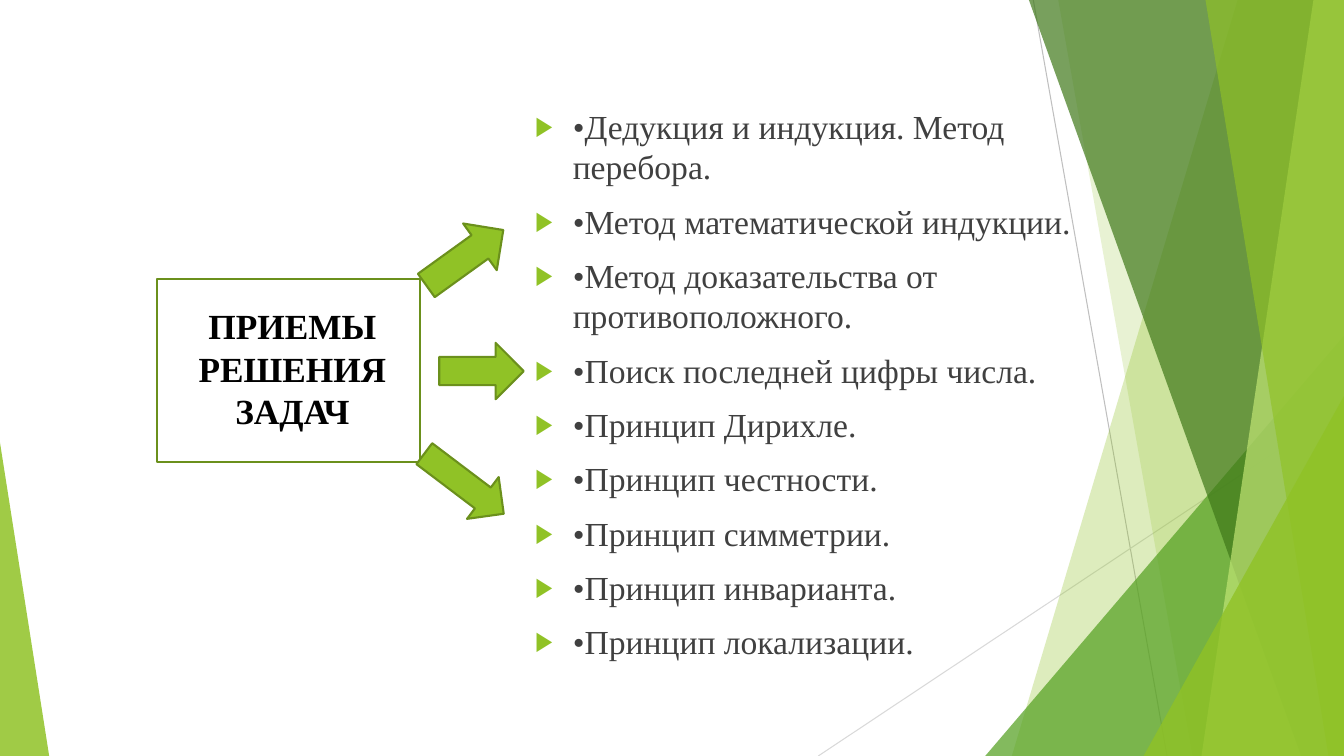
from collections import namedtuple
from dataclasses import dataclass
from lxml import etree
from pptx import Presentation
from pptx import util as u
from pptx.dml import color
from pptx.enum import shapes, text
from pptx.oxml import ns

Box = namedtuple("Box", "x y w h")


@dataclass(frozen=True)
class Theme:
    font: str = "Times New Roman"
    head: float = 25.2
    body: float = 24
    gap: float = 10
    lime: str = "90C226"
    edge: str = "6B901C"
    leaf: str = "54A021"
    moss: str = "3F7819"
    pale: str = "C0E474"
    ink: str = "404040"
    dark: str = "000000"
    rule: str = "BFBFBF"
    mist: str = "D9D9D9"


theme = Theme()
METHODS = [
    "Дедукция и индукция. Метод перебора.",
    "Метод математической индукции.",
    "Метод доказательства от противоположного.",
    "Поиск последней цифры числа.",
    "Принцип Дирихле.",
    "Принцип честности.",
    "Принцип симметрии.",
    "Принцип инварианта.",
    "Принцип локализации.",
]


def rgb(code):
    return color.RGBColor.from_string(code)


def add(node, tag, **attrs):
    return etree.SubElement(node, ns.qn(tag), **attrs)


def place(item, box):
    item.left, item.top, item.width, item.height = map(u.Cm, box)


def paint(shape, code, alpha):
    shape.shadow.inherit = False
    shape.fill.solid()
    shape.fill.fore_color.rgb = rgb(code)
    shape.line.fill.background()
    tint = shape.element.spPr.find(".//" + ns.qn("a:srgbClr"))
    add(tint, "a:alpha", val=str(alpha * 1000))


def style(para, size, code, bold=False):
    for run in para.runs:
        run.font.name = theme.font
        run.font.size = u.Pt(size)
        run.font.bold = bold
        run.font.color.rgb = rgb(code)


def draw_line(slide, start, end, code):
    line = slide.shapes.add_connector(
        shapes.MSO_CONNECTOR.STRAIGHT, *map(u.Cm, start + end))
    line.line.color.rgb = rgb(code)
    line.line.width = u.Pt(0.75)
    add(line.element.spPr, "a:effectLst")


def draw_band(slide, box, top, base, code, alpha):
    right, low = box.x + box.w, box.y + box.h
    points = [(right, box.y), (right, low), (box.x + base, low)]
    band = slide.shapes.build_freeform(u.Cm(box.x + top), u.Cm(box.y))
    band.add_line_segments([(u.Cm(x), u.Cm(y)) for x, y in points])
    paint(band.convert_to_shape(), code, alpha)


def draw_wedge(slide, box, width, height, side, code, alpha):
    left = box.x + side * (box.w - width)
    wedge = slide.shapes.add_shape(
        shapes.MSO_SHAPE.ISOSCELES_TRIANGLE,
        *map(u.Cm, (left, box.y + box.h - height, width, height)))
    wedge.adjustments[0] = side
    paint(wedge, code, alpha)


def draw_decor(slide, box):
    right, low = box.x + box.w, box.y + box.h
    draw_line(slide, (box.x + 26.04, box.y), (box.x + 29.41, low), theme.rule)
    draw_line(slide, (right, box.y + 10.24), (box.x + 20.62, low), theme.mist)
    for draw, *spec_row in [
        (draw_band, 31.19, 25.5, theme.lime, 30),
        (draw_band, 26.67, 30.05, theme.lime, 20),
        (draw_wedge, 9.04, 10.59, 1, theme.leaf, 72),
        (draw_band, 25.93, 32.79, theme.moss, 70),
        (draw_band, 33.1, 30.28, theme.pale, 70),
        (draw_band, 30.38, 33.48, theme.lime, 65),
        (draw_wedge, 5.05, 9.07, 1, theme.lime, 80),
        (draw_wedge, 1.24, 7.9, 0, theme.lime, 85),
    ]:
        draw(slide, box, *spec_row)


def draw_title(slide, box):
    title = slide.shapes.title
    slide.shapes.element.append(title.element)
    place(title, (box.x - 1.95, box.y + 0.38, box.w + 4.09, box.h - 1.02))
    frame = title.text_frame
    frame.text = "ПРИЕМЫ\vРЕШЕНИЯ\vЗАДАЧ"
    frame.auto_size = text.MSO_AUTO_SIZE.NONE
    frame.vertical_anchor = text.MSO_ANCHOR.BOTTOM
    para = frame.paragraphs[0]
    para.alignment = text.PP_ALIGN.CENTER
    style(para, theme.head, theme.dark, True)


def draw_list(slide, box):
    body = slide.placeholders[1]
    slide.shapes.element.append(body.element)
    place(body, box)
    frame = body.text_frame
    frame.text = "\n".join("•" + name for name in METHODS)
    frame.auto_size = text.MSO_AUTO_SIZE.NONE
    frame.vertical_anchor = text.MSO_ANCHOR.TOP
    frame.margin_top = u.Cm(1.25)
    indent = u.Cm(0.95)
    for para in frame.paragraphs:
        para.space_before = u.Pt(theme.gap)
        style(para, theme.body, theme.ink)
        props = para._p.get_or_add_pPr()
        props.set("marL", str(indent))
        props.set("indent", str(-indent))
        add(add(props, "a:buClr"), "a:srgbClr", val=theme.lime)
        add(props, "a:buSzPct", val="80000")
        add(props, "a:buChar", char="▶")


def draw_hub(slide, box):
    draw_title(slide, box)
    hub = slide.shapes.add_shape(shapes.MSO_SHAPE.RECTANGLE, *map(u.Cm, box))
    hub.fill.background()
    parts = [hub]
    for x, y, w, h, turn in [
        (7.11, 1.6, 2.13, 1.42, 0),
        (6.56, -1.27, 2.39, 1.45, 324.2),
        (6.48, 4.49, 2.51, 1.32, 37.1),
    ]:
        arrow = slide.shapes.add_shape(
            shapes.MSO_SHAPE.RIGHT_ARROW,
            *map(u.Cm, (box.x + x, box.y + y, w, h)))
        arrow.rotation = turn
        arrow.fill.solid()
        arrow.fill.fore_color.rgb = rgb(theme.lime)
        parts.append(arrow)
    for part in parts:
        part.shadow.inherit = False
        part.line.color.rgb = rgb(theme.edge)
        part.line.width = u.Pt(1.5)


def main():
    deck = Presentation()
    page = Box(0, 0, 33.87, 19.05)
    deck.slide_width, deck.slide_height = u.Cm(page.w), u.Cm(page.h)
    slide = deck.slides.add_slide(deck.slide_layouts[1])
    draw_decor(slide, page)
    draw_list(slide, Box(13.23, 1.42, 15.47, 16.89))
    draw_hub(slide, Box(3.96, 7.04, 6.63, 4.6))
    deck.save("out.pptx")


if __name__ == "__main__":
    main()
